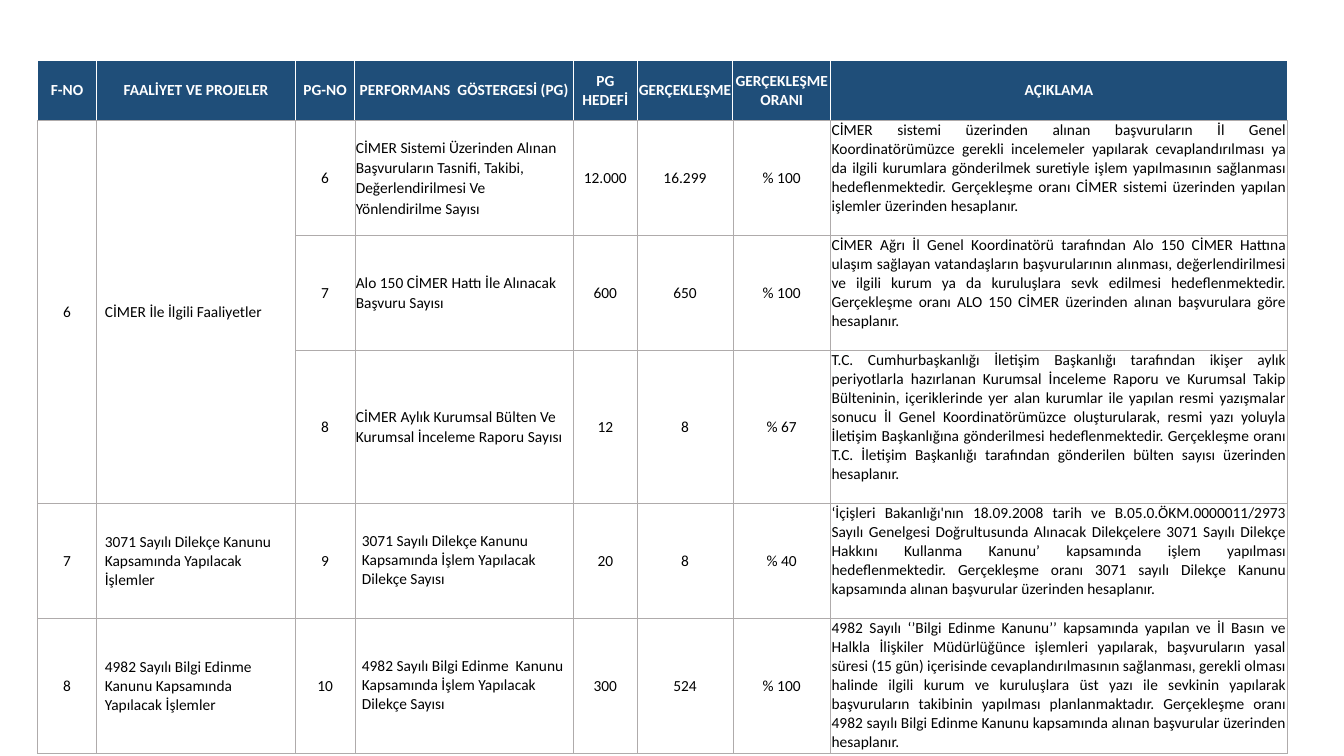
from pptx import Presentation
from pptx.dml.color import RGBColor
from pptx.enum.text import MSO_ANCHOR, PP_ALIGN
from pptx.oxml import parse_xml
from pptx.oxml.ns import nsdecls
from pptx.util import Inches, Pt

COLORS = {"header": "1F4E79", "grid": "AFABAB", "white": "FFFFFF", "text": "000000"}
COL_WIDTHS = [0.59, 1.97, 0.59, 2.17, 0.63, 0.95, 0.97, 4.53]
ROW_HEIGHTS = [0.59, 1.14, 1.14, 1.52, 1.14, 1.34]
TIGHT, WIDE, MEDIUM = (0.01, 0.01), (0.08, 0.01), (0.07, 0)  # side and top margins

HEADERS = ["F-NO", "FAALİYET VE PROJELER", "PG-NO", "PERFORMANS  GÖSTERGESİ (PG)",
           "PG\nHEDEFİ", "GERÇEKLEŞME", "GERÇEKLEŞME ORANI", "AÇIKLAMA"]
ROWS = [
    ["6", "CİMER İle İlgili Faaliyetler", "6",
     "CİMER Sistemi Üzerinden Alınan Başvuruların Tasnifi, Takibi, "
     "Değerlendirilmesi Ve Yönlendirilme Sayısı", "12.000", "16.299", "% 100",
     "CİMER sistemi üzerinden alınan başvuruların İl Genel Koordinatörümüzce gerekli "
     "incelemeler yapılarak cevaplandırılması ya da ilgili kurumlara gönderilmek suretiyle "
     "işlem yapılmasının sağlanması hedeflenmektedir. Gerçekleşme oranı CİMER sistemi "
     "üzerinden yapılan işlemler üzerinden hesaplanır."],
    ["", "", "7", "Alo 150 CİMER Hattı İle Alınacak Başvuru Sayısı", "600", "650", "% 100",
     "CİMER Ağrı İl Genel Koordinatörü tarafından Alo 150 CİMER Hattına ulaşım sağlayan "
     "vatandaşların başvurularının alınması, değerlendirilmesi ve ilgili kurum ya da "
     "kuruluşlara sevk edilmesi hedeflenmektedir. Gerçekleşme oranı ALO 150 CİMER üzerinden "
     "alınan başvurulara göre hesaplanır."],
    ["", "", "8", "CİMER Aylık Kurumsal Bülten Ve Kurumsal İnceleme Raporu Sayısı",
     "12", "8", "% 67",
     "T.C. Cumhurbaşkanlığı İletişim Başkanlığı tarafından ikişer aylık periyotlarla "
     "hazırlanan Kurumsal İnceleme Raporu ve Kurumsal Takip Bülteninin, içeriklerinde yer "
     "alan kurumlar ile yapılan resmi yazışmalar sonucu İl Genel Koordinatörümüzce "
     "oluşturularak, resmi yazı yoluyla İletişim Başkanlığına gönderilmesi "
     "hedeflenmektedir. Gerçekleşme oranı T.C. İletişim Başkanlığı tarafından gönderilen "
     "bülten sayısı üzerinden hesaplanır."],
    ["7", "3071 Sayılı Dilekçe Kanunu Kapsamında Yapılacak İşlemler", "9",
     "3071 Sayılı Dilekçe Kanunu Kapsamında İşlem Yapılacak Dilekçe Sayısı",
     "20", "8", "% 40",
     "‘İçişleri Bakanlığı'nın 18.09.2008 tarih ve B.05.0.ÖKM.0000011/2973 Sayılı Genelgesi "
     "Doğrultusunda Alınacak Dilekçelere 3071 Sayılı Dilekçe Hakkını Kullanma Kanunu’ "
     "kapsamında işlem yapılması hedeflenmektedir. Gerçekleşme oranı 3071 sayılı Dilekçe "
     "Kanunu kapsamında alınan başvurular üzerinden hesaplanır."],
    ["8", "4982 Sayılı Bilgi Edinme Kanunu Kapsamında Yapılacak İşlemler", "10",
     "4982 Sayılı Bilgi Edinme  Kanunu Kapsamında İşlem Yapılacak Dilekçe Sayısı",
     "300", "524", "% 100",
     "4982 Sayılı ‘’Bilgi Edinme Kanunu’’ kapsamında yapılan ve İl Basın ve Halkla İlişkiler "
     "Müdürlüğünce işlemleri yapılarak, başvuruların yasal süresi (15 gün) içerisinde "
     "cevaplandırılmasının sağlanması, gerekli olması halinde ilgili kurum ve kuruluşlara "
     "üst yazı ile sevkinin yapılarak başvuruların takibinin yapılması planlanmaktadır. "
     "Gerçekleşme oranı 4982 sayılı Bilgi Edinme Kanunu kapsamında alınan başvurular "
     "üzerinden hesaplanır."],
]


def write(tf, text, size=11, font="Calibri", color="text", bold=False,
          align=PP_ALIGN.LEFT, spacing=None):
    p = tf.paragraphs[0]
    p.alignment = align
    if spacing:
        p.line_spacing = spacing
    for i, line in enumerate(text.split("\n")):
        if i:
            p.add_line_break()
        r = p.add_run()
        r.text = line
        r.font.size, r.font.name, r.font.bold = Pt(size), font, bold
        r.font.color.rgb = RGBColor.from_string(COLORS[color])


class SlideBuilder:
    def __init__(self, prs):
        self.s = prs.slides.add_slide(prs.slide_layouts[6])

    def table(self, left, top, widths, heights):
        shape = self.s.shapes.add_table(len(heights), len(widths), Inches(left), Inches(top),
                                        Inches(sum(widths)), Inches(sum(heights)))
        table = shape.table
        table.horz_banding = False
        for col, width in zip(table.columns, widths):
            col.width = Inches(width)
        for row, height in zip(table.rows, heights):
            row.height = Inches(height)
        return table

    def borders(self, cell, **sides):
        tcPr = cell._tc.get_or_add_tcPr()
        for side in "LRTB":
            color, width = sides[side]
            tcPr.append(parse_xml(
                f'<a:ln{side} {nsdecls("a")} w="{Pt(width)}"><a:solidFill>'
                f'<a:srgbClr val="{COLORS[color]}"/></a:solidFill></a:ln{side}>'))

    def cell(self, cell, text, margins=TIGHT, anchor=MSO_ANCHOR.MIDDLE, fill=None, **fmt):
        side, top = margins
        cell.margin_left = cell.margin_right = Inches(side)
        cell.margin_top, cell.margin_bottom = Inches(top), 0
        cell.vertical_anchor = anchor
        if fill:
            cell.fill.solid()
            cell.fill.fore_color.rgb = RGBColor.from_string(COLORS[fill])
        else:
            cell.fill.background()
        if text:
            write(cell.text_frame, text, **fmt)


def body_format(row, col):
    if col == 1:
        return {"margins": WIDE}
    if col == 3:
        return {"margins": TIGHT, "spacing": 1.07} if row <= 3 else {"margins": MEDIUM}
    if col == 7:
        return {"anchor": MSO_ANCHOR.TOP, "align": PP_ALIGN.JUSTIFY}
    return {"margins": WIDE if col == 2 else TIGHT, "align": PP_ALIGN.CENTER}


def main():
    prs = Presentation()
    prs.slide_width, prs.slide_height = Inches(13.33), Inches(7.5)
    b = SlideBuilder(prs)
    table = b.table(0.37, 0.6, COL_WIDTHS, ROW_HEIGHTS)

    # Header row
    thin, medium, white = ("grid", 0.25), ("grid", 0.5), ("white", 1)
    for c, text in enumerate(HEADERS):
        cell = table.cell(0, c)
        b.borders(cell, L=white, R=white, T=white, B=thin)
        b.cell(cell, text, fill="header", color="white", bold=True, align=PP_ALIGN.CENTER)

    # Activity rows
    last = len(HEADERS) - 1
    for r, row in enumerate(ROWS, 1):
        for c, text in enumerate(row):
            cell = table.cell(r, c)
            b.borders(cell, L=medium if c else thin, R=medium if c < last else thin,
                      T=thin, B=thin)
            b.cell(cell, text, **body_format(r, c))

    # The first activity spans three indicators
    for c in (0, 1):
        table.cell(1, c).merge(table.cell(3, c))

    prs.save("out.pptx")


if __name__ == "__main__":
    main()
